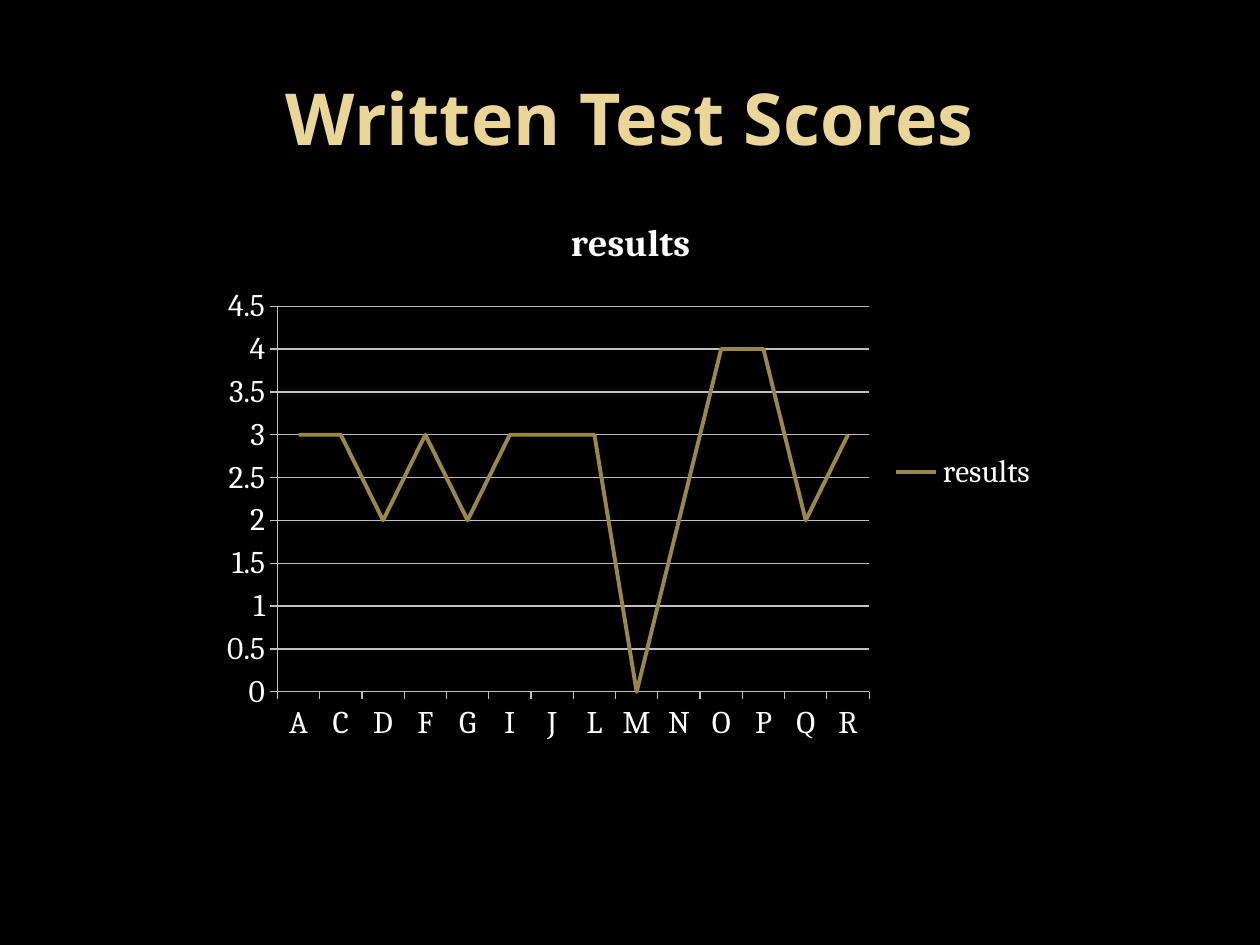
import pptx
import pptx.chart.data
import pptx.dml.color
import pptx.enum.chart
import pptx.enum.text
import pptx.util
from pptx.util import Inches

COLORS = {
    "background": "000000",
    "heading": "EAD696",
    "text": "FFFFFF",
    "grid": "C0C0C0",
    "line": "9A8846",
}
HEADING = "Written Test Scores"
SERIES_NAME = "results"
SCORES = {
    "A": 3, "C": 3, "D": 2, "F": 3, "G": 2, "I": 3, "J": 3,
    "L": 3, "M": 0, "N": 2, "O": 4, "P": 4, "Q": 2, "R": 3,
}


def color(name):
    return pptx.dml.color.RGBColor.from_string(COLORS[name])


def style_font(font, name, size, color_name, bold=False):
    font.name = name
    font.size = pptx.util.Pt(size)
    font.bold = bold
    font.color.rgb = color(color_name)


def style_line(line, color_name, width):
    line.color.rgb = color(color_name)
    line.width = pptx.util.Pt(width)


def add_heading(page):
    box = page.shapes.add_textbox(Inches(0.5), Inches(0.3), Inches(9), Inches(1.25))
    frame = box.text_frame
    frame.word_wrap = True
    frame.vertical_anchor = pptx.enum.text.MSO_ANCHOR.MIDDLE
    para = frame.paragraphs[0]
    para.text = HEADING
    para.alignment = pptx.enum.text.PP_ALIGN.CENTER
    style_font(para.font, "Noto Sans", 41, "heading", True)


def add_score_chart(page):
    data = pptx.chart.data.CategoryChartData()
    data.categories = list(SCORES)
    data.add_series(SERIES_NAME, list(SCORES.values()))
    chart = page.shapes.add_chart(
        pptx.enum.chart.XL_CHART_TYPE.LINE,
        Inches(1.67), Inches(1.53), Inches(6.67), Inches(4.44), data,
    ).chart
    style_font(chart.font, "Cambria", 18, "text")

    chart.has_title = True
    title_frame = chart.chart_title.text_frame
    title_frame.text = SERIES_NAME
    style_font(title_frame.paragraphs[0].font, "Cambria", 21.6, "text", True)

    chart.has_legend = True
    chart.legend.position = pptx.enum.chart.XL_LEGEND_POSITION.RIGHT
    chart.legend.include_in_layout = False

    for axis in (chart.category_axis, chart.value_axis):
        axis.major_tick_mark = pptx.enum.chart.XL_TICK_MARK.OUTSIDE
        axis.minor_tick_mark = pptx.enum.chart.XL_TICK_MARK.NONE
        style_line(axis.format.line, "grid", 0.75)
    scale = chart.value_axis
    scale.minimum_scale, scale.maximum_scale, scale.major_unit = 0, 4.5, 0.5
    scale.has_major_gridlines = True
    style_line(scale.major_gridlines.format.line, "grid", 0.75)

    plot = chart.plots[0]
    plot.vary_by_categories = False
    series = plot.series[0]
    series.smooth = False
    series.marker.style = pptx.enum.chart.XL_MARKER_STYLE.NONE
    style_line(series.format.line, "line", 2.25)


def main():
    deck = pptx.Presentation()
    deck.slide_width, deck.slide_height = Inches(10), Inches(7.5)
    page = deck.slides.add_slide(deck.slide_layouts[6])
    page.background.fill.solid()
    page.background.fill.fore_color.rgb = color("background")
    add_heading(page)
    add_score_chart(page)
    deck.save("out.pptx")


if __name__ == "__main__":
    main()
